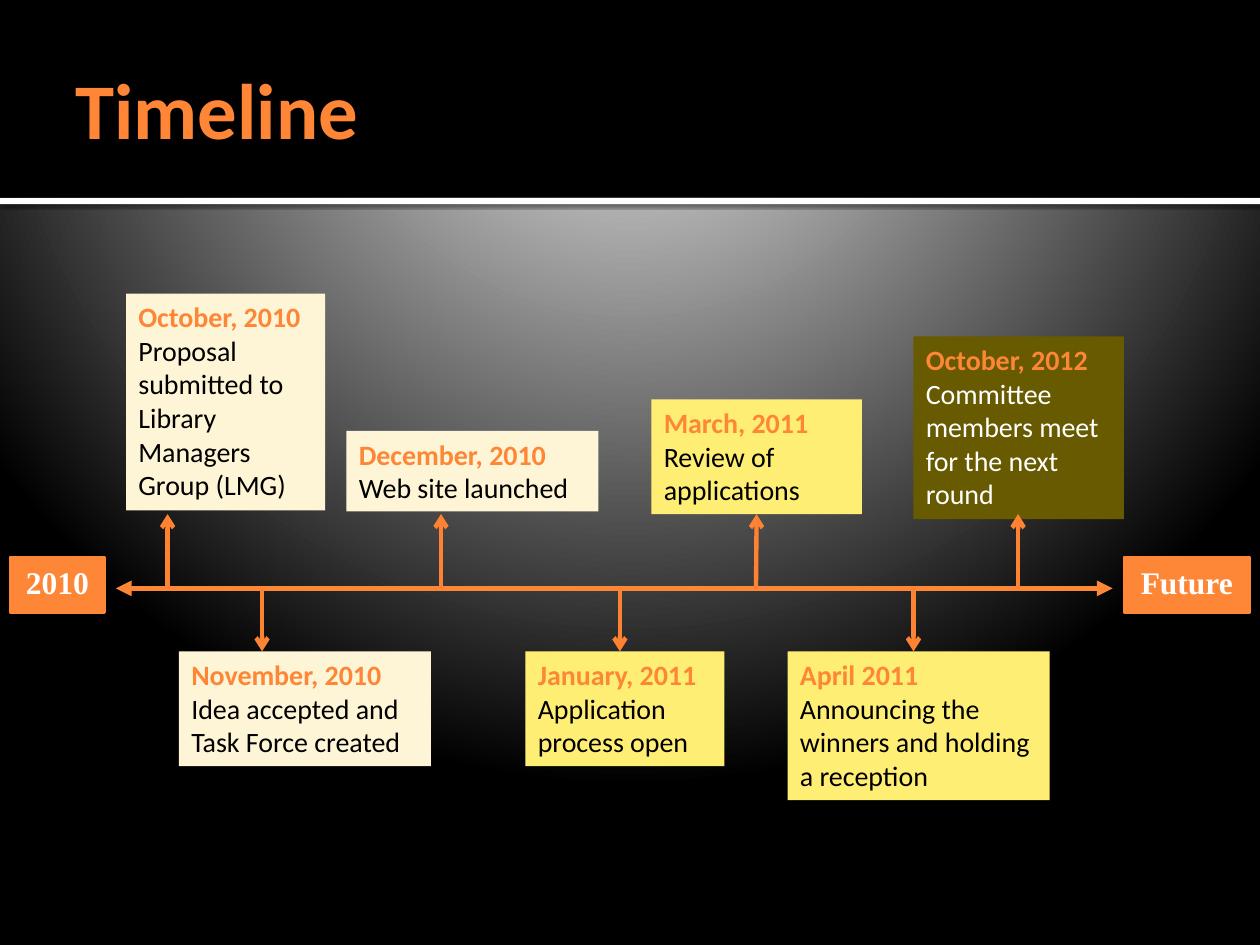
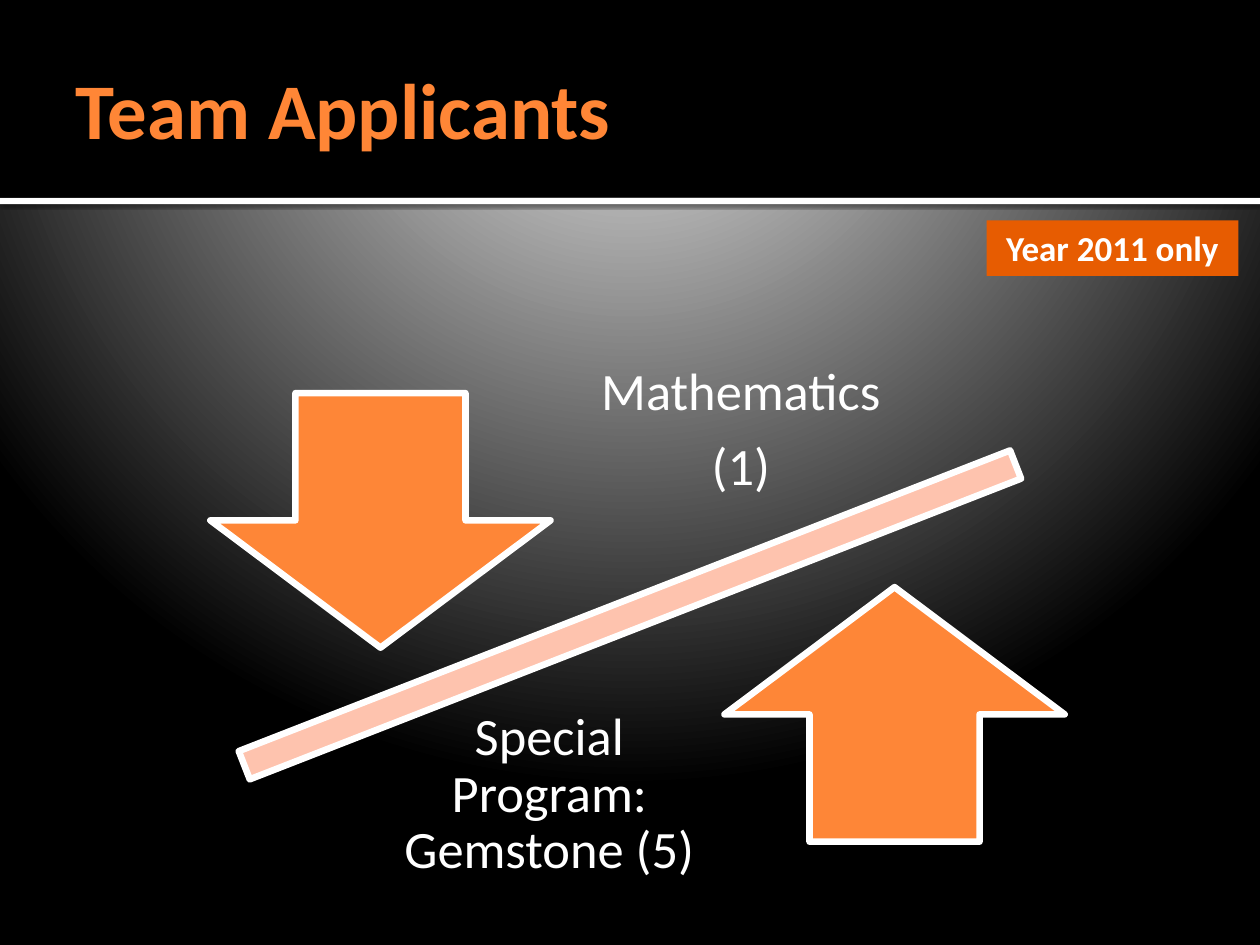
from pptx import Presentation
from pptx.dml.color import RGBColor
from pptx.enum import shapes, text
from pptx.oxml import parse_xml
from pptx.oxml.ns import nsdecls
from pptx.util import Inches, Pt

ORANGE = RGBColor(0xFE, 0x86, 0x37)
TITLE_ORANGE = RGBColor(0xFF, 0x86, 0x36)
ARROW_ORANGE = RGBColor(0xFD, 0x82, 0x31)
DEEP_ORANGE = RGBColor(0xE7, 0x5C, 0x01)
PINK = RGBColor(0xFE, 0xC3, 0xAE)
CREAM = RGBColor(0xFD, 0xF5, 0xD5)
YELLOW = RGBColor(0xFF, 0xEE, 0x74)
OLIVE = RGBColor(0x67, 0x5A, 0x00)
WHITE = RGBColor(0xFF, 0xFF, 0xFF)
BLACK = RGBColor(0, 0, 0)

BACKGROUND = f"""<p:bg {nsdecls("p", "a")}><p:bgPr>
<a:gradFill rotWithShape="1"><a:gsLst>
<a:gs pos="0"><a:srgbClr val="C0C0C0"/></a:gs>
<a:gs pos="12000"><a:srgbClr val="C0C0C0"/></a:gs>
<a:gs pos="20000"><a:srgbClr val="BEBEBE"/></a:gs>
<a:gs pos="100000"><a:srgbClr val="000000"/></a:gs></a:gsLst>
<a:path path="circle"><a:fillToRect l="10000" t="-25000" r="10000" b="125000"/></a:path>
</a:gradFill><a:effectLst/></p:bgPr></p:bg>"""
BAND_SHADOW = f"""<a:effectLst {nsdecls("a")}>
<a:outerShdw blurRad="31750" dist="10160" dir="5400000" algn="tl" rotWithShape="0">
<a:srgbClr val="000000"><a:alpha val="60000"/></a:srgbClr></a:outerShdw></a:effectLst>"""


def add_block(page, preset, place, fill, line=None, line_width=0):
    block = page.shapes.add_shape(preset, *map(Inches, place))
    block.shadow.inherit = False
    block.fill.solid()
    block.fill.fore_color.rgb = fill
    if line is None:
        block.line.fill.background()
    else:
        block.line.color.rgb = line
        block.line.width = Pt(line_width)
    return block


def write(shape, lines, size, align=text.PP_ALIGN.LEFT, anchor=text.MSO_ANCHOR.TOP, font="Calibri"):
    """Fill the shape with one paragraph per (words, colour, bold)."""
    frame = shape.text_frame
    frame.word_wrap = True
    frame.vertical_anchor = anchor
    frame.text = "\n".join(words for words, _, _ in lines)
    for para, (_, colour, bold) in zip(frame.paragraphs, lines):
        para.alignment = align
        for span in para.runs:
            span.font.name = font
            span.font.size = Pt(size)
            span.font.bold = bold
            span.font.color.rgb = colour
    return frame


CENTER = text.PP_ALIGN.CENTER
MIDDLE = text.MSO_ANCHOR.MIDDLE
GROW = text.MSO_AUTO_SIZE.SHAPE_TO_FIT_TEXT
RECTANGLE = shapes.MSO_SHAPE.RECTANGLE

deck = Presentation()
deck.slide_width, deck.slide_height = Inches(10), Inches(7.5)
layout = deck.slide_layouts[5]

# Shared background, bands and title
pages = []
for heading in ("Timeline", "Team Applicants"):
    page = deck.slides.add_slide(layout)
    page.element.cSld.insert(0, parse_xml(BACKGROUND))
    title = page.shapes.title
    title.left, title.top, title.width, title.height = map(Inches, (0.5, 0.17, 9, 1.37))
    frame = write(title, [(heading, TITLE_ORANGE, True)], 45, anchor=MIDDLE)
    frame.auto_size = text.MSO_AUTO_SIZE.NONE
    frame.margin_left = Inches(0.1)
    frame.margin_right = frame.margin_top = frame.margin_bottom = Inches(0.05)
    white_band = add_block(page, RECTANGLE, (0, 1.57, 10, 0.05), WHITE)
    white_band.element.spPr.remove(white_band.element.spPr.find("{*}effectLst"))
    white_band.element.spPr.append(parse_xml(BAND_SHADOW))
    black_band = add_block(page, RECTANGLE, (0, 0, 10, 1.57), BLACK)
    for band in (white_band, black_band):
        title.element.addprevious(band.element)
    pages.append(page)
timeline, applicants = pages

# Timeline: date, event, box place, arrow position, fill, text colour
AXIS = 4.67
UPPER_TIP, LOWER_TIP = 4.08, 5.17
events = [
    ("October, 2010", "Proposal submitted to Library Managers Group (LMG)",
     (1, 2.33, 1.58, 1.72), 1.33, CREAM, BLACK),
    ("November, 2010", "Idea accepted and Task Force created",
     (1.42, LOWER_TIP, 2, 0.91), 2.08, CREAM, BLACK),
    ("December, 2010", "Web site launched", (2.75, 3.42, 2, 0.64), 3.5, CREAM, BLACK),
    ("January, 2011", "Application process open",
     (4.17, LOWER_TIP, 1.58, 0.91), 4.92, YELLOW, BLACK),
    ("March, 2011", "Review of applications", (5.17, 3.17, 1.67, 0.91), 6, YELLOW, BLACK),
    ("April 2011", "Announcing the winners and holding a reception",
     (6.25, LOWER_TIP, 2.08, 1.18), 7.25, YELLOW, BLACK),
    ("October, 2012", "Committee members meet for the next round",
     (7.25, 2.67, 1.67, 1.45), 8.08, OLIVE, WHITE),
]
lines = [(0.92, AXIS, 8.83, AXIS, ORANGE, 3, ("headEnd", "tailEnd"), "triangle", None)]
for date, event, place, x, fill, colour in events:
    box = add_block(timeline, RECTANGLE, place, fill)
    write(box, [(date, ORANGE, True), (event, colour, False)], 16).auto_size = GROW
    left, top, width, height = place
    tip = UPPER_TIP if top < AXIS else LOWER_TIP
    edge = top + height if top < AXIS else top
    touches = abs(left + width / 2 - x) < 0.02 and abs(edge - tip) < 0.02
    lines.append((x, AXIS, x, tip, ARROW_ORANGE, 2.5, ("tailEnd",), "arrow",
                  box if touches else None))

for x1, y1, x2, y2, colour, width, ends, head, target in lines:
    line = timeline.shapes.add_connector(
        shapes.MSO_CONNECTOR.STRAIGHT, *map(Inches, (x1, y1, x2, y2)))
    line.line.color.rgb = colour
    line.line.width = Pt(width)
    for end in ends:
        line.line._get_or_add_ln().append(
            parse_xml(f'<a:{end} {nsdecls("a")} type="{head}"/>'))
    line.element.spPr.append(parse_xml(f'<a:effectLst {nsdecls("a")}/>'))
    if target is not None:
        line.end_connect(target, 2 if y2 < AXIS else 0)

for label, left, width in (("2010", 0.08, 0.75), ("Future", 8.92, 1)):
    end_box = add_block(timeline, RECTANGLE, (left, 4.42, width, 0.44), ORANGE, ORANGE, 1.5)
    frame = write(end_box, [(label, WHITE, True)], 18, CENTER, font="Times New Roman")
    frame.paragraphs[0].space_after = Pt(10)

# Team applicants: a tilted beam between two arrows
for preset, place, fill, tilt in (
    (shapes.MSO_SHAPE.MATH_MINUS, (0.53, 4.37, 8.94, 1.02), PINK, 338.7),
    (shapes.MSO_SHAPE.DOWN_ARROW, (1.67, 3.12, 2.7, 2.02), ORANGE, 0),
    (shapes.MSO_SHAPE.UP_ARROW, (5.75, 4.66, 2.7, 2.02), ORANGE, 0),
):
    add_block(applicants, preset, place, fill, WHITE, 3.78).rotation = tilt

for words, place in (
    (("Mathematics", "(1)"), (4.17, 2.36, 3.42, 2.12)),
    (("Special Program: Gemstone (5)",), (2.92, 5.25, 2.88, 2.12)),
):
    team = applicants.shapes.add_textbox(*map(Inches, place))
    frame = write(team, [(word, WHITE, False) for word in words], 30, CENTER, MIDDLE)
    frame.margin_left = frame.margin_right = Inches(0.23)
    frame.margin_top = frame.margin_bottom = Inches(0.23)
    for para in frame.paragraphs:
        para.line_spacing = 0.9
        para.space_after = Pt(10.5)

year_tag = add_block(applicants, RECTANGLE, (7.83, 1.75, 2, 0.44), DEEP_ORANGE)
write(year_tag, [("Year 2011 only", WHITE, True)], 20, CENTER).auto_size = GROW

deck.save("out.pptx")
